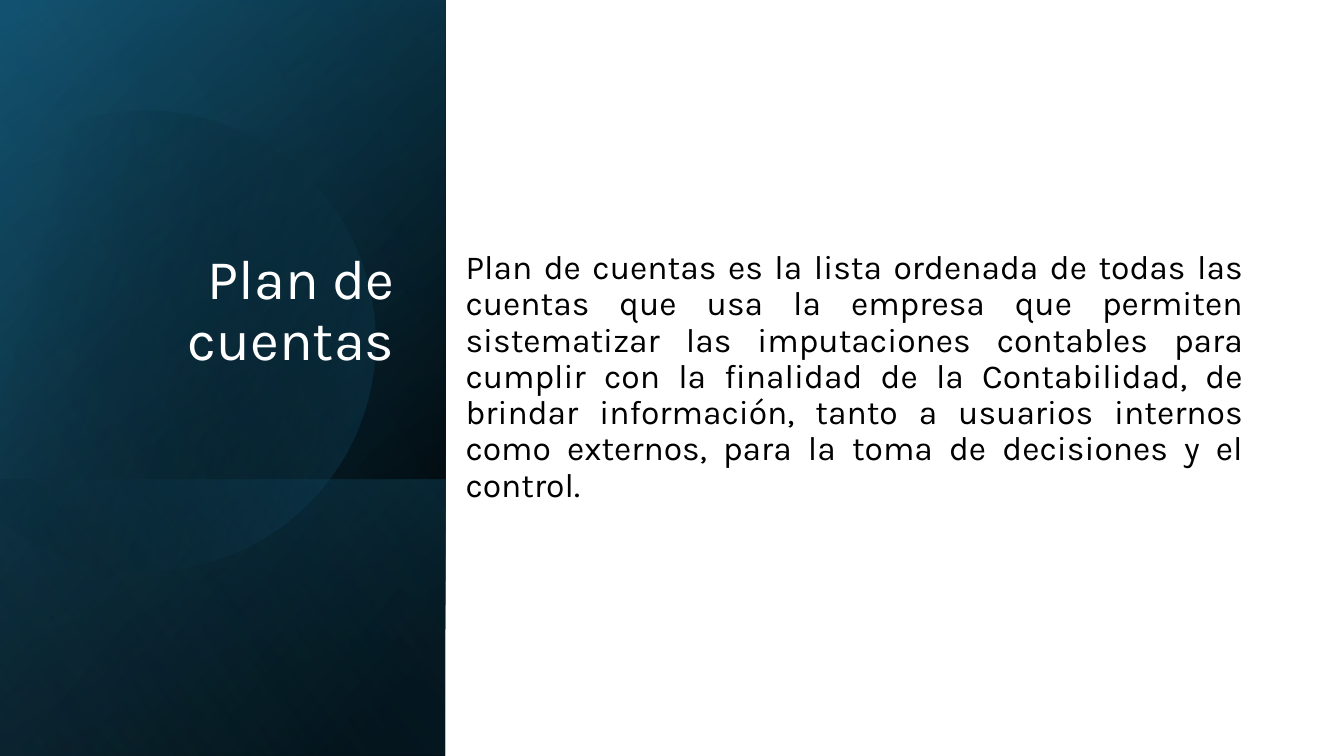
"""Build the slide that defines the plan de cuentas."""
import math

import pptx
import pptx.dml.color
import pptx.enum.shapes
import pptx.enum.text
import pptx.oxml
import pptx.oxml.ns
import pptx.util

Pt = pptx.util.Pt
RGB = pptx.dml.color.RGBColor
ALIGN = pptx.enum.text.PP_ALIGN
ANCHOR = pptx.enum.text.MSO_ANCHOR

WHITE = RGB(0xFF, 0xFF, 0xFF)
BLACK = RGB(0, 0, 0)
NAVY = RGB(0x10, 0x48, 0x62)
TEAL = RGB(0x15, 0x60, 0x82)
SKY = RGB(0x46, 0xB1, 0xE1)

WIDE, HIGH, SIDE = 960, 540, 318.24
TURN = 343.9
START = (107.28, 79.2)
CURVES = [
    ((177.12, 80.64), (241.2, 127.44), (261.36, 198)),
    ((286.56, 285.84), (236.16, 376.56), (149.04, 401.76)),
    ((94.32, 417.6), (38.16, 403.92), (-2.16, 370.08)),
    ((-10.8, 362.16),),
    ((-10.8, 126),),
    ((0, 115.92),),
    ((16.56, 102.24), (36, 92.16), (57.6, 85.68)),
    ((74.16, 81.36), (90.72, 79.2), START),
]
BODY = (
    "Plan de cuentas es la lista ordenada de todas las cuentas que usa la "
    "empresa que permiten sistematizar las imputaciones contables para "
    "cumplir con la finalidad de la Contabilidad, de brindar información, "
    "tanto a usuarios internos como externos, para la toma de decisiones "
    "y el control."
)


def shade(shape, stops, angle):
    """Fill a shape with a linear gradient of (place, colour, alpha) stops."""
    shape.shadow.inherit = False
    shape.line.fill.background()
    shape.fill.gradient()
    grad = shape._element.spPr.find(pptx.oxml.ns.qn("a:gradFill"))
    for child in list(grad):
        grad.remove(child)
    grad.set("rotWithShape", "1")
    space = pptx.oxml.ns.nsdecls("a")
    marks = "".join(
        f'<a:gs pos="{place * 1000}"><a:srgbClr val="{color}">'
        f'<a:alpha val="{alpha * 1000}"/></a:srgbClr></a:gs>'
        for place, color, alpha in stops
    )
    grad.append(pptx.oxml.parse_xml(f"<a:gsLst {space}>{marks}</a:gsLst>"))
    grad.append(pptx.oxml.parse_xml(
        f'<a:lin {space} ang="{angle * 60000}" scaled="0"/>'))


def add_box(slide, left, top, width, height):
    """Add a plain rectangle."""
    kind = pptx.enum.shapes.MSO_SHAPE.RECTANGLE
    return slide.shapes.add_shape(
        kind, Pt(left), Pt(top), Pt(width), Pt(height))


def add_panel(slide, top, stops, angle):
    """Add a turned side panel that runs from top to the slide's foot."""
    tall = HIGH - top
    shift = (tall - SIDE) / 2
    panel = add_box(slide, -shift, top + shift, tall, SIDE)
    panel.rotation = 90
    panel._element.spPr.xfrm.set("flipH", "1")
    shade(panel, stops, angle)


def trace(start, curves, steps=24):
    """Return the points along an outline of lines and cubic curves."""
    points = [start]
    for curve in curves:
        if len(curve) == 1:
            points.append(curve[0])
            continue
        knots = (points[-1], *curve)
        for step in range(1, steps + 1):
            t = step / steps
            parts = [math.comb(3, i) * t ** i * (1 - t) ** (3 - i)
                     for i in range(4)]
            points.append(tuple(
                sum(part * knot[axis] for part, knot in zip(parts, knots))
                for axis in (0, 1)))
    return points


def add_disc(slide, stops, angle):
    """Add the clipped disc, turned together with its gradient."""
    mid_x, mid_y = 114.12, 240.84
    cos, sin = (fn(math.radians(-TURN)) for fn in (math.cos, math.sin))
    points = [
        (Pt(mid_x + (x - mid_x) * cos - (y - mid_y) * sin),
         Pt(mid_y + (x - mid_x) * sin + (y - mid_y) * cos))
        for x, y in trace(START, CURVES)
    ]
    pen = slide.shapes.build_freeform(*points[0])
    pen.add_line_segments(points[1:], close=True)
    disc = pen.convert_to_shape()
    disc.rotation = TURN
    shade(disc, stops, angle)


def add_text(slide, place, text, size, color, align, anchor, foot=3.6):
    """Add a wrapped text box with one paragraph."""
    box = slide.shapes.add_textbox(*map(Pt, place))
    frame = box.text_frame
    frame.word_wrap = True
    frame.vertical_anchor = anchor
    frame.margin_bottom = Pt(foot)
    frame.text = text
    para = frame.paragraphs[0]
    para.alignment = align
    para.line_spacing = 0.9
    font = para.runs[0].font
    font.name = "Karla"
    font.size = Pt(size)
    font.color.rgb = color


def main():
    """Draw the side panel, the title and the definition."""
    deck = pptx.Presentation()
    deck.slide_width, deck.slide_height = Pt(WIDE), Pt(HIGH)
    slide = deck.slides.add_slide(deck.slide_layouts[6])

    back = add_box(slide, 0, 0, WIDE, HIGH)
    back.shadow.inherit = False
    back.fill.solid()
    back.fill.fore_color.rgb = WHITE
    back.line.fill.background()

    add_panel(slide, 0, [(8, BLACK, 100), (100, NAVY, 100)], 50)
    add_panel(slide, 0, [(0, BLACK, 0), (99, TEAL, 46)], 30)
    add_panel(slide, 342.72, [(2, TEAL, 29), (100, BLACK, 30)], 130)
    add_disc(slide, [(29, BLACK, 0), (100, TEAL, 43)], 30)
    add_panel(slide, 0, [(0, BLACK, 0), (99, SKY, 11)], 120)

    add_text(slide, (36.72, 46.08, 252, 266.4), "Plan de cuentas",
             40, WHITE, ALIGN.RIGHT, ANCHOR.BOTTOM, foot=46.5)
    add_text(slide, (325.44, 51.12, 569.52, 437.04), BODY,
             24, BLACK, ALIGN.JUSTIFY, ANCHOR.MIDDLE)
    deck.save("out.pptx")


if __name__ == "__main__":
    main()
